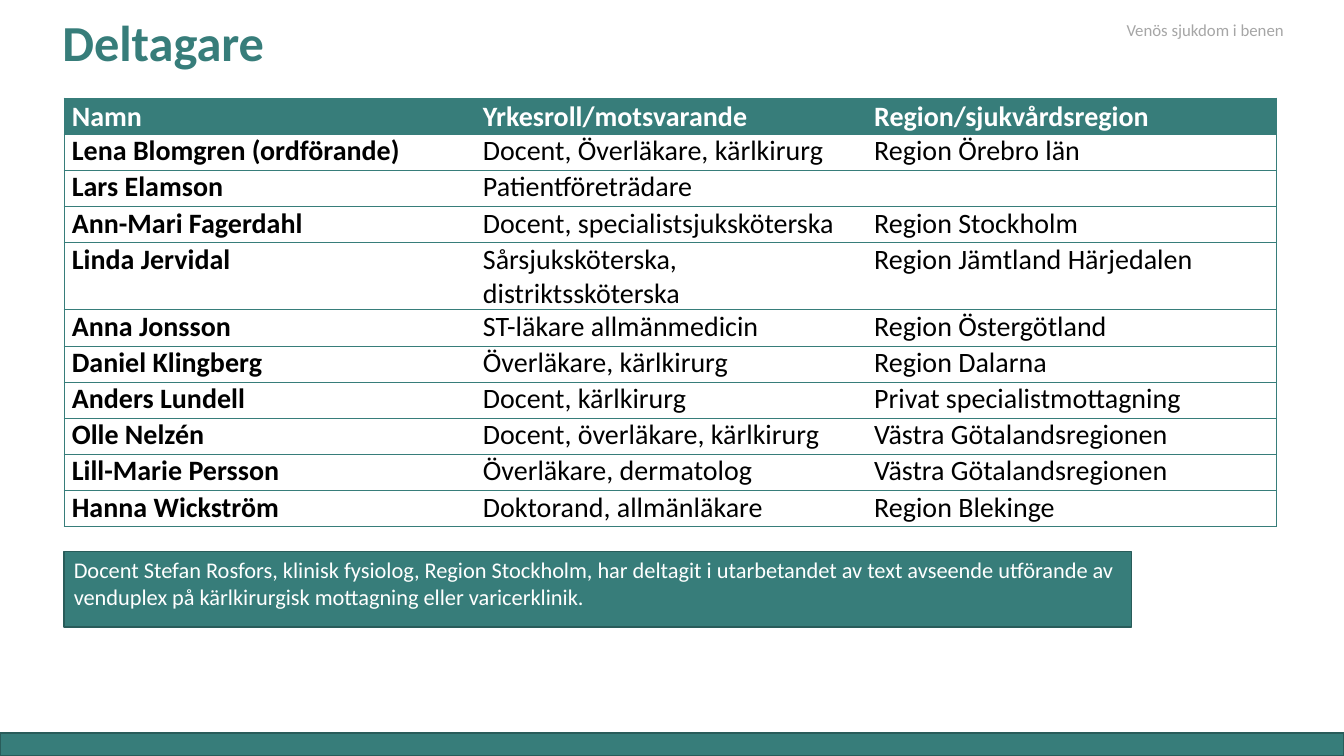
from dataclasses import dataclass

from lxml import etree
from pptx import Presentation
from pptx.dml.color import RGBColor
from pptx.enum.shapes import MSO_SHAPE
from pptx.enum.text import MSO_ANCHOR, PP_ALIGN
from pptx.oxml.ns import qn
from pptx.util import Cm, Pt

RECT = MSO_SHAPE.RECTANGLE
TOP, MIDDLE = MSO_ANCHOR.TOP, MSO_ANCHOR.MIDDLE
LEFT = PP_ALIGN.LEFT


@dataclass(frozen=True)
class Theme:
    font: str = "Calibri"
    teal: str = "377D7A"
    dark_teal: str = "295C5A"
    white: str = "FFFFFF"
    black: str = "000000"
    grey: str = "A6A6A6"
    title: float = 36
    table: float = 20
    note: float = 16
    topic: float = 12


@dataclass(frozen=True)
class Box:
    left: float
    top: float
    width: float
    height: float

    def cm(self) -> tuple:
        return Cm(self.left), Cm(self.top), Cm(self.width), Cm(self.height)


@dataclass(frozen=True)
class Style:
    size: float
    color: str
    bold: bool = False
    spacing: float = 1.0


@dataclass(frozen=True)
class Label:
    box: Box
    text: str
    style: Style
    anchor: MSO_ANCHOR = TOP


@dataclass(frozen=True)
class Member:
    name: str
    role: str
    region: str = ""


T = Theme()
SLIDE_W, SLIDE_H = 33.87, 19.05
BAR_H = 0.58
MARGIN = 1.61
ROW_H = 0.91
COLUMNS = (10.36, 9.86, 10.34)
TABLE_TOP = 2.47

LABELS = (
    Label(Box(1.32, 0.1, 29.2, 2.08), "Deltagare",
          Style(T.title, T.teal, True, 0.9), MIDDLE),
    Label(Box(28.14, 0.38, 4.78, 0.76), "Venös sjukdom i benen",
          Style(T.topic, T.grey)),
)

HEADER = Member("Namn", "Yrkesroll/motsvarande", "Region/sjukvårdsregion")
MEMBERS = (
    Member("Lena Blomgren (ordförande)", "Docent, Överläkare, kärlkirurg", "Region Örebro län"),
    Member("Lars Elamson", "Patientföreträdare"),
    Member("Ann-Mari Fagerdahl", "Docent, specialistsjuksköterska", "Region Stockholm"),
    Member("Linda Jervidal", "Sårsjuksköterska, distriktssköterska",
           "Region Jämtland Härjedalen"),
    Member("Anna Jonsson", "ST-läkare allmänmedicin", "Region Östergötland"),
    Member("Daniel Klingberg", "Överläkare, kärlkirurg", "Region Dalarna"),
    Member("Anders Lundell", "Docent, kärlkirurg", "Privat specialistmottagning"),
    Member("Olle Nelzén", "Docent, överläkare, kärlkirurg", "Västra Götalandsregionen"),
    Member("Lill-Marie Persson", "Överläkare, dermatolog", "Västra Götalandsregionen"),
    Member("Hanna Wickström", "Doktorand, allmänläkare", "Region Blekinge"),
)

NOTE = ("Docent Stefan Rosfors, klinisk fysiolog, Region Stockholm, har deltagit i "
        "utarbetandet av text avseende utförande av venduplex på kärlkirurgisk "
        "mottagning eller varicerklinik.")


def rgb(color: str) -> RGBColor:
    return RGBColor.from_string(color)


def write(tf, text: str, style: Style) -> None:
    p = tf.paragraphs[0]
    p.alignment = LEFT
    p.line_spacing = style.spacing
    r = p.add_run()
    r.text = text
    r.font.name = T.font
    r.font.size = Pt(style.size)
    r.font.bold = style.bold
    r.font.color.rgb = rgb(style.color)


def add_label(s, label: Label) -> None:
    tf = s.shapes.add_textbox(*label.box.cm()).text_frame
    tf.word_wrap = True
    tf.vertical_anchor = label.anchor
    write(tf, label.text, label.style)


def add_panel(s, box: Box):
    sp = s.shapes.add_shape(RECT, *box.cm())
    sp.shadow.inherit = False
    sp.fill.solid()
    sp.fill.fore_color.rgb = rgb(T.teal)
    sp.line.color.rgb = rgb(T.dark_teal)
    sp.line.width = Pt(1)
    return sp


def set_borders(cell, drawn: str) -> None:
    """Draw the sides named in drawn (L, R, T, B) and clear the others."""
    props = cell._tc.get_or_add_tcPr()
    for side in "LRTB":
        ln = etree.SubElement(props, qn(f"a:ln{side}"), w=str(Pt(0.5)))
        if side in drawn:
            fill = etree.SubElement(ln, qn("a:solidFill"))
            etree.SubElement(fill, qn("a:srgbClr"), val=T.teal)
        else:
            etree.SubElement(ln, qn("a:noFill"))


def add_members(s) -> None:
    rows = (HEADER, *MEMBERS)
    box = Box(MARGIN, TABLE_TOP, sum(COLUMNS), ROW_H * len(rows))
    table = s.shapes.add_table(len(rows), len(COLUMNS), *box.cm()).table
    table.horz_banding = False
    for column, width in zip(table.columns, COLUMNS):
        column.width = Cm(width)
    for i, member in enumerate(rows):
        table.rows[i].height = Cm(ROW_H)
        for j, text in enumerate((member.name, member.role, member.region)):
            cell = table.cell(i, j)
            cell.margin_left = cell.margin_right = Cm(0.2)
            cell.margin_top = cell.margin_bottom = 0
            set_borders(cell, "TB" + ("L", "", "R")[j])
            if i == 0:
                cell.fill.solid()
                cell.fill.fore_color.rgb = rgb(T.teal)
                style = Style(T.table, T.white, True, 1.06)
            else:
                cell.fill.background()
                style = Style(T.table, T.black, j == 0)
            if text:
                write(cell.text_frame, text, style)


def main() -> None:
    prs = Presentation()
    prs.slide_width, prs.slide_height = Cm(SLIDE_W), Cm(SLIDE_H)
    s = prs.slides.add_slide(prs.slide_layouts[6])

    # Footer bar
    add_panel(s, Box(0, SLIDE_H - BAR_H, SLIDE_W, BAR_H))

    # Title and topic
    for label in LABELS:
        add_label(s, label)

    # Participants
    add_members(s)

    # Note below the table
    tf = add_panel(s, Box(MARGIN, 13.9, 26.9, 1.9)).text_frame
    tf.word_wrap = True
    tf.vertical_anchor = TOP
    write(tf, NOTE, Style(T.note, T.white))

    prs.save("out.pptx")


if __name__ == "__main__":
    main()
